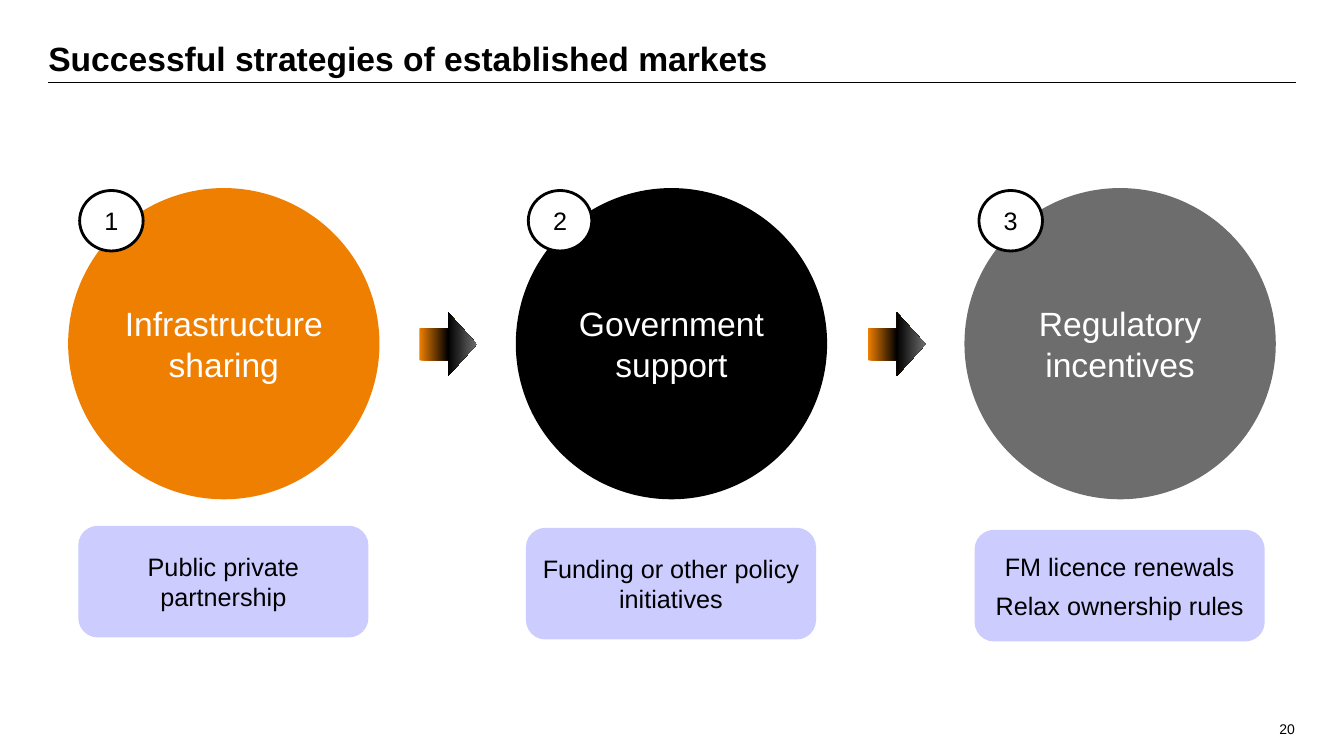
from copy import deepcopy

from pptx import Presentation
from pptx.dml.color import RGBColor
from pptx.enum.shapes import MSO_CONNECTOR, MSO_SHAPE
from pptx.enum.text import MSO_ANCHOR, PP_ALIGN
from pptx.oxml.ns import qn
from pptx.util import Emu, Pt

PX = 9144  # 100 px to the inch
ORANGE = RGBColor(0xEE, 0x7F, 0x00)
BLACK = RGBColor(0x00, 0x00, 0x00)
GREY = RGBColor(0x6D, 0x6D, 0x6D)
WHITE = RGBColor(0xFF, 0xFF, 0xFF)
LILAC = RGBColor(0xCC, 0xCC, 0xFF)
OVAL = MSO_SHAPE.OVAL
ROUNDED = MSO_SHAPE.ROUNDED_RECTANGLE
ARROW = MSO_SHAPE.RIGHT_ARROW
STRAIGHT = MSO_CONNECTOR.STRAIGHT
LEFT, CENTER, RIGHT = PP_ALIGN.LEFT, PP_ALIGN.CENTER, PP_ALIGN.RIGHT
TOP, MIDDLE, BOTTOM = MSO_ANCHOR.TOP, MSO_ANCHOR.MIDDLE, MSO_ANCHOR.BOTTOM


def write(box, lines, size, color=BLACK, align=CENTER, anchor=MIDDLE, side=10, bold=False):
    """Fill a box with one paragraph per line; side is the left and right inset in px."""
    frame = box.text_frame
    frame.word_wrap = True
    frame.vertical_anchor = anchor
    frame.margin_left = frame.margin_right = Emu(side * PX)
    for number, line in enumerate(lines):
        para = frame.add_paragraph() if number else frame.paragraphs[0]
        para.alignment = align
        if number:
            para.space_before = Pt(6)
        span = para.add_run()
        span.text = line
        span.font.name = "Arial"
        span.font.size = Pt(size)
        span.font.bold = bold
        span.font.color.rgb = color


def add_filled(kind, left, top, width, height, fill, outline):
    shape = page.shapes.add_shape(kind, left * PX, top * PX, width * PX, height * PX)
    shape.shadow.inherit = False
    shape.fill.solid()
    shape.fill.fore_color.rgb = fill
    shape.line.color.rgb = outline
    shape.line.width = Pt(2)
    return shape


deck = Presentation()
deck.slide_width = Emu(1333 * PX)
deck.slide_height = Emu(750 * PX)
page = deck.slides.add_slide(deck.slide_layouts[6])

# Title, rule and page number
title = page.shapes.add_textbox(48 * PX, 30 * PX, 1237 * PX, 52 * PX)
write(title, ["Successful strategies of established markets"], 24,
      align=LEFT, anchor=BOTTOM, side=0, bold=True)
title.text_frame.margin_top = title.text_frame.margin_bottom = Emu(4 * PX)
title.text_frame.paragraphs[0].line_spacing = 0.9

rule = page.shapes.add_connector(STRAIGHT, 48 * PX, 82 * PX, 1285 * PX, 82 * PX)
rule.line.color.rgb = BLACK
rule.line.width = Pt(1)
rule.element.spPr.append(rule.element.spPr.makeelement(qn("a:effectLst"), {}))

page_number = page.shapes.add_textbox(1200 * PX, 710 * PX, 94 * PX, 27 * PX)
write(page_number, ["20"], 10, align=RIGHT, anchor=TOP)

# Three strategies: circle, note, numbered badge
STRATEGIES = [
    ("Infrastructure sharing", ORANGE, ["Public private partnership"], 79),
    ("Government support", BLACK, ["Funding or other policy initiatives"], 524),
    ("Regulatory incentives", GREY, ["FM licence renewals", "Relax ownership rules"], 971),
]
CIRCLE_LEFT, PITCH = 69, 444.5
for index, (name, color, notes, badge_left) in enumerate(STRATEGIES):
    left = int(CIRCLE_LEFT + index * PITCH)
    circle = add_filled(OVAL, left, 188, 306, 306, color, color)
    write(circle, [name], 24, WHITE, side=0)

    note = add_filled(ROUNDED, left + 10, 523 + 2 * index, 285, 108, LILAC, LILAC)
    write(note, notes, 18)

    badge = add_filled(OVAL, badge_left, 189, 63, 60, WHITE, BLACK)
    write(badge, [str(index + 1)], 18)

# Gradient arrows between the circles
for arrow_left in (416, 861):
    arrow = page.shapes.add_shape(ARROW, arrow_left * PX, 310 * PX, 57 * PX, 63 * PX)
    arrow.shadow.inherit = False
    arrow.line.fill.background()
    arrow.fill.gradient()
    arrow.fill.gradient_angle = 0
    stop_list = arrow.element.spPr.find(qn("a:gradFill")).find(qn("a:gsLst"))
    stop_list.append(deepcopy(stop_list[0]))
    for stop, position, color in zip(arrow.fill.gradient_stops, (0, 0.5, 1), (ORANGE, BLACK, GREY)):
        stop.position = position
        stop.color.rgb = color

deck.save("out.pptx")
